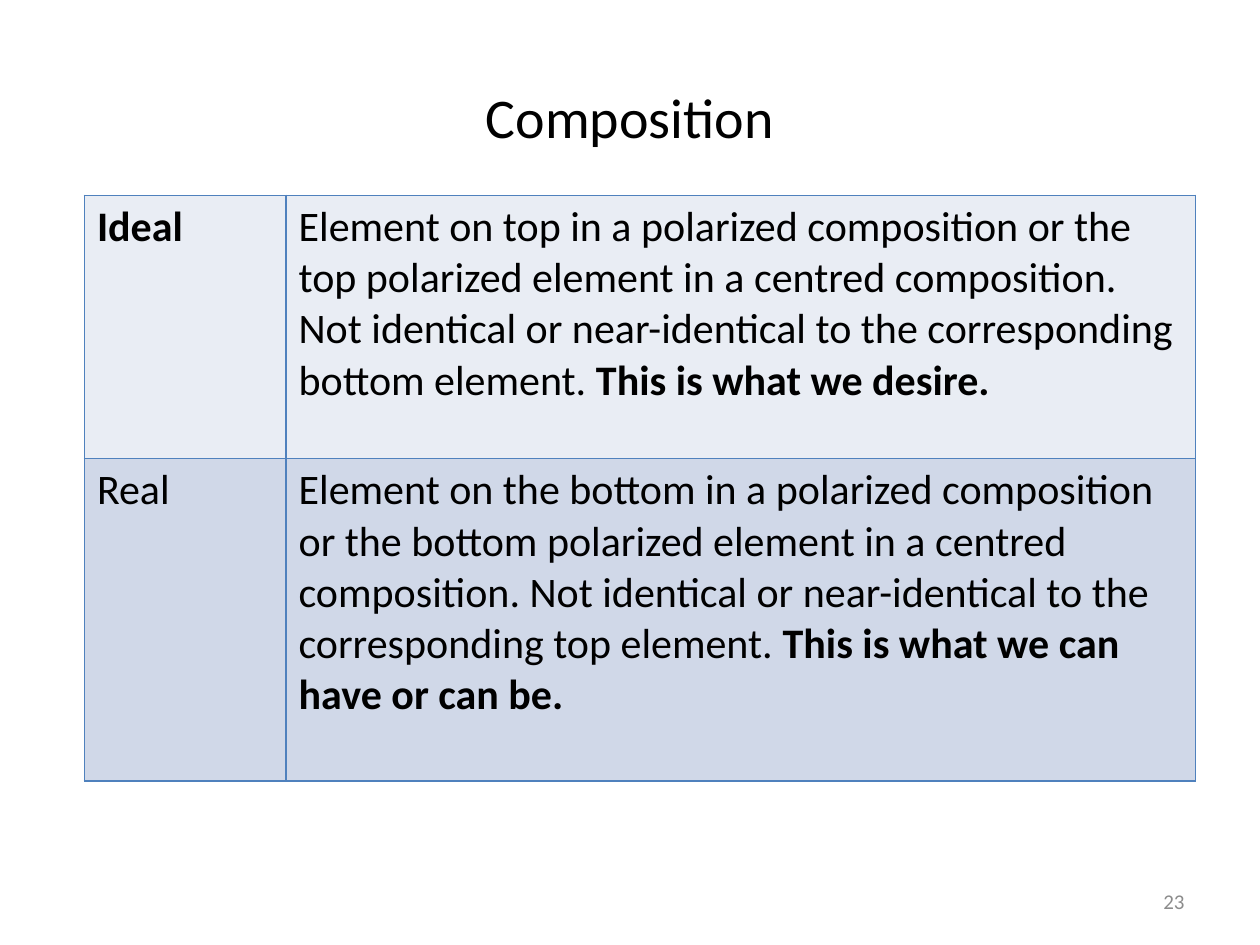
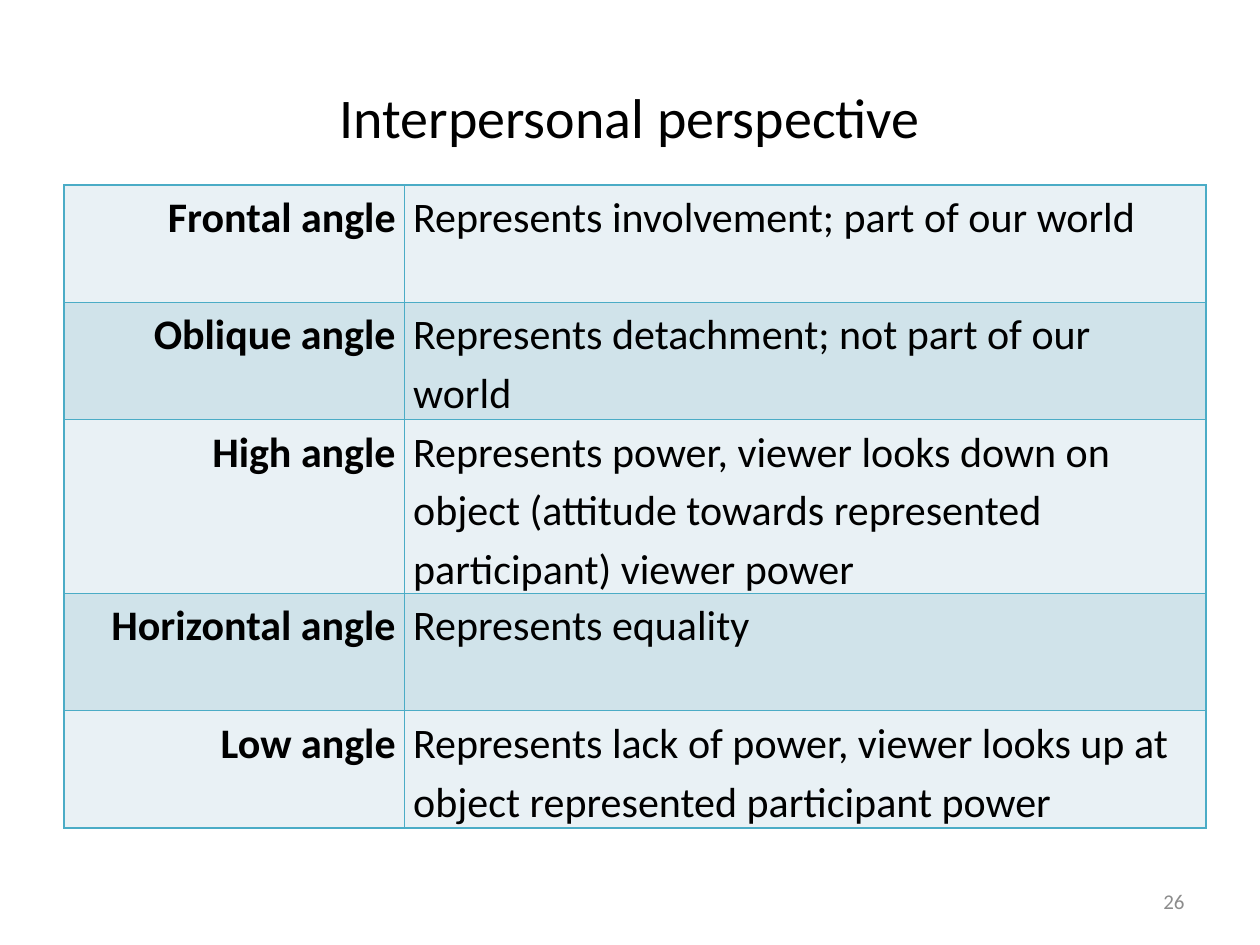
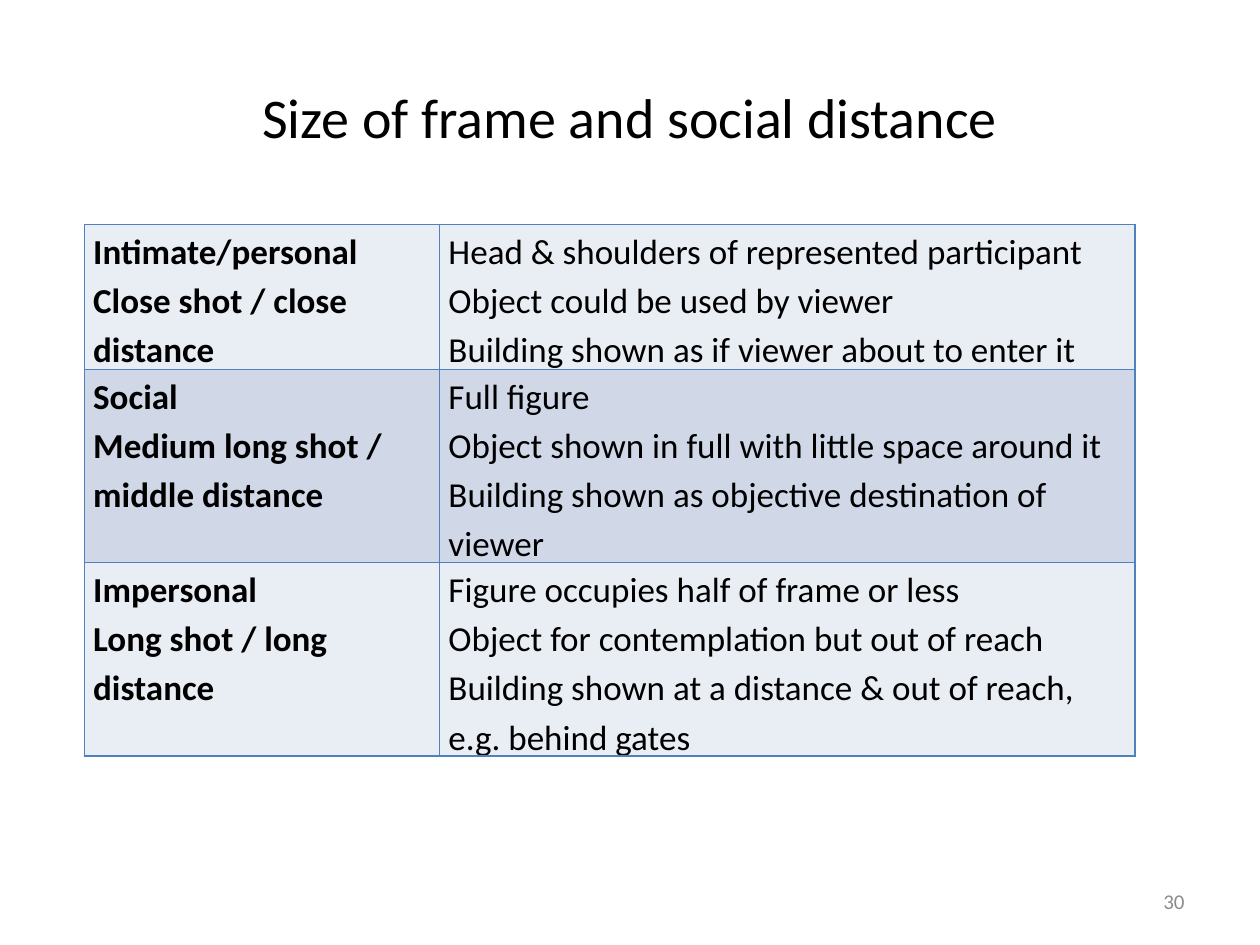
from dataclasses import dataclass

import pptx
import pptx.dml.color
import pptx.enum.text
import pptx.oxml
import pptx.oxml.ns
import pptx.util
from pptx.util import Inches

ALIGN = pptx.enum.text.PP_ALIGN
ANCHOR = pptx.enum.text.MSO_ANCHOR


# Theme
@dataclass(frozen=True)
class Palette:
    border: str
    light: str
    dark: str


@dataclass(frozen=True)
class Theme:
    font: str = "Calibri"
    ink: str = "000000"
    muted: str = "8C8C8C"
    title_size: int = 32
    number_size: int = 12
    border_width: int = 1
    blue: Palette = Palette("4F81BD", "E9EDF4", "D0D8E8")
    aqua: Palette = Palette("4BACC6", "E9F1F5", "D0E3EA")


THEME = Theme()


# Content records; a newline in a text starts a new paragraph
@dataclass(frozen=True)
class Row:
    label: str
    text: str
    height: float
    emphasis: str = ""
    label_bold: bool = True


@dataclass(frozen=True)
class Grid:
    left: float
    top: float
    columns: tuple[float, float]
    rows: tuple[Row, ...]
    palette: Palette
    size: int = 24
    label_align: ALIGN = ALIGN.LEFT
    compact: bool = True


@dataclass(frozen=True)
class Page:
    title: str
    number: int
    grid: Grid


PAGES = (
    Page("Composition", 23, Grid(0.67, 1.55, (1.6, 7.22), (
        Row("Ideal",
            "Element on top in a polarized composition or the top polarized element "
            "in a centred composition. Not identical or near-identical to the "
            "corresponding bottom element. ",
            2.09, "This is what we desire."),
        Row("Real",
            "Element on the bottom in a polarized composition or the bottom polarized "
            "element in a centred composition. Not identical or near-identical to the "
            "corresponding top element. ",
            2.56, "This is what we can have or can be.", label_bold=False),
    ), THEME.blue, compact=False)),
    Page("Interpersonal perspective", 26, Grid(0.51, 1.47, (2.7, 6.36), (
        Row("Frontal angle", "Represents involvement; part of our world", 0.93),
        Row("Oblique angle", "Represents detachment; not part of our world", 0.93),
        Row("High angle",
            "Represents power, viewer looks down on object (attitude towards "
            "represented participant) viewer power", 0.93),
        Row("Horizontal angle", "Represents equality", 0.93),
        Row("Low angle",
            "Represents lack of power, viewer looks up at object represented "
            "participant power", 0.93),
    ), THEME.aqua, label_align=ALIGN.RIGHT)),
    Page("Size of frame and social distance", 30, Grid(0.67, 1.78, (2.82, 5.52), (
        Row("Intimate/personal\nClose shot / close distance",
            "Head & shoulders of represented participant\n"
            "Object could be used by viewer\n"
            "Building shown as if viewer about to enter it", 1.11),
        Row("Social\nMedium long shot / middle distance",
            "Full figure\n"
            "Object shown in full with little space around it\n"
            "Building shown as objective destination of viewer", 1.11),
        Row("Impersonal\nLong shot / long distance",
            "Figure occupies half of frame or less\n"
            "Object for contemplation but out of reach\n"
            "Building shown at a distance & out of reach, e.g. behind gates", 1.11),
    ), THEME.blue, size=20)),
)


# Text
def write(frame, text: str, *, size: int, color: str = THEME.ink, bold: bool = False,
          align: ALIGN = ALIGN.LEFT, spacing: float = 1.0, emphasis: str = "") -> None:
    """Fill a text frame; emphasis is a bold ending to the last paragraph."""
    frame.word_wrap = True
    for index, line in enumerate(text.split("\n")):
        para = frame.add_paragraph() if index else frame.paragraphs[0]
        para.alignment = align
        para.line_spacing = spacing
        add_span(para, line, size, color, bold)
    if emphasis:
        add_span(para, emphasis, size, color, True)


def add_span(para, text: str, size: int, color: str, bold: bool) -> None:
    span = para.add_run()
    span.text = text
    span.font.name = THEME.font
    span.font.size = pptx.util.Pt(size)
    span.font.bold = bold
    span.font.color.rgb = pptx.dml.color.RGBColor.from_string(color)


def add_text(slide, text: str, left: float, top: float, width: float, height: float,
             **style) -> None:
    box = slide.shapes.add_textbox(Inches(left), Inches(top), Inches(width), Inches(height))
    box.text_frame.vertical_anchor = ANCHOR.MIDDLE
    write(box.text_frame, text, **style)


# Table
def add_borders(cell, color: str) -> None:
    properties = cell._tc.get_or_add_tcPr()
    width = pptx.util.Pt(THEME.border_width)
    for side in ("lnL", "lnR", "lnT", "lnB"):
        properties.append(pptx.oxml.parse_xml(
            f'<a:{side} {pptx.oxml.ns.nsdecls("a")} w="{width}"><a:solidFill>'
            f'<a:srgbClr val="{color}"/></a:solidFill></a:{side}>'))


def style_cell(cell, grid: Grid, fill: str) -> None:
    add_borders(cell, grid.palette.border)
    cell.fill.solid()
    cell.fill.fore_color.rgb = pptx.dml.color.RGBColor.from_string(fill)
    if grid.compact:
        cell.margin_left = cell.margin_right = Inches(0.07)
        cell.margin_top = cell.margin_bottom = Inches(0)


def add_grid(slide, grid: Grid) -> None:
    height = sum(row.height for row in grid.rows)
    table = slide.shapes.add_table(
        len(grid.rows), len(grid.columns), Inches(grid.left), Inches(grid.top),
        Inches(sum(grid.columns)), Inches(height)).table
    table.first_row = table.horz_banding = False
    for column, width in zip(table.columns, grid.columns):
        column.width = Inches(width)
    spacing = 1.15 if grid.compact else 1.0
    for index, row in enumerate(grid.rows):
        table.rows[index].height = Inches(row.height)
        label, detail = table.cell(index, 0), table.cell(index, 1)
        fill = grid.palette.dark if index % 2 else grid.palette.light
        for cell in (label, detail):
            style_cell(cell, grid, fill)
        write(label.text_frame, row.label, size=grid.size, bold=row.label_bold,
              align=grid.label_align, spacing=spacing)
        write(detail.text_frame, row.text, size=grid.size, spacing=spacing,
              emphasis=row.emphasis)


# Slides
def add_page(deck, page: Page) -> None:
    slide = deck.slides.add_slide(deck.slide_layouts[6])
    add_text(slide, page.title, 0.5, 0.3, 9, 1.25,
             size=THEME.title_size, align=ALIGN.CENTER)
    add_grid(slide, page.grid)
    add_text(slide, str(page.number), 7.17, 6.95, 2.33, 0.4,
             size=THEME.number_size, color=THEME.muted, align=ALIGN.RIGHT)


def main() -> None:
    deck = pptx.Presentation()
    deck.slide_width, deck.slide_height = Inches(10), Inches(7.5)
    for page in PAGES:
        add_page(deck, page)
    deck.save("out.pptx")


if __name__ == "__main__":
    main()
